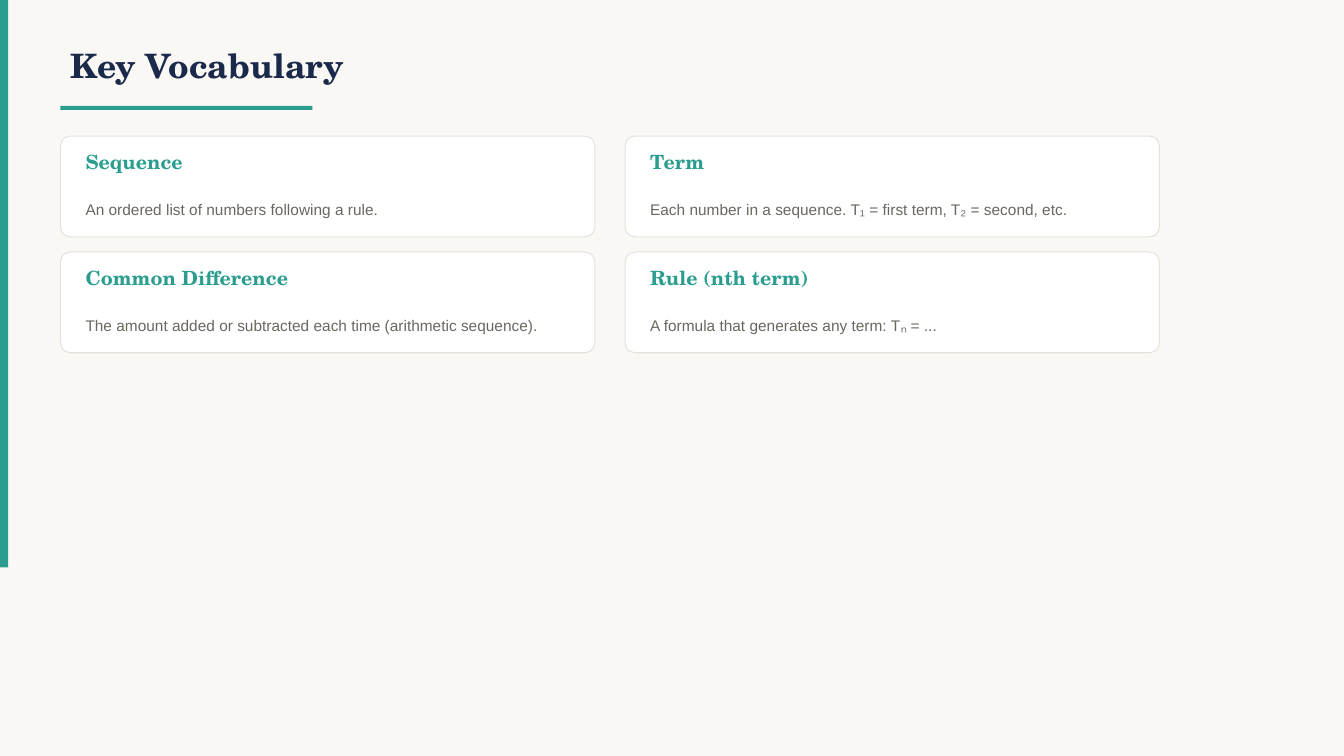
from pptx import Presentation
from pptx.dml.color import RGBColor
from pptx.enum.shapes import MSO_SHAPE as Shape
from pptx.enum.text import MSO_ANCHOR as Anchor
from pptx.util import Inches, Pt

CREAM = RGBColor(0xFA, 0xF8, 0xF5)
TEAL = RGBColor(0x2A, 0x9D, 0x8F)
NAVY = RGBColor(0x1B, 0x2A, 0x4A)
WHITE = RGBColor(0xFF, 0xFF, 0xFF)
BORDER = RGBColor(0xE5, 0xE2, 0xDC)
GRAY = RGBColor(0x6B, 0x66, 0x60)
SERIF, SANS = "TeX Gyre Schola", "Arial"

TERMS = [
    ("Sequence", "An ordered list of numbers following a rule."),
    ("Term", "Each number in a sequence. T₁ = first term, T₂ = second, etc."),
    ("Common Difference",
     "The amount added or subtracted each time (arithmetic sequence)."),
    ("Rule (nth term)", "A formula that generates any term: Tₙ = ..."),
]

deck = Presentation()
deck.slide_width, deck.slide_height = Inches(13.33), Inches(7.5)
slide = deck.slides.add_slide(deck.slide_layouts[6])
slide.background.fill.solid()
slide.background.fill.fore_color.rgb = CREAM


def add_box(kind, x, y, w, h, fill, line=None):
    box = slide.shapes.add_shape(kind, Inches(x), Inches(y), Inches(w), Inches(h))
    box.shadow.inherit = False
    box.fill.solid()
    box.fill.fore_color.rgb = fill
    if line is None:
        box.line.fill.background()
    else:
        box.line.color.rgb = line
        box.line.width = Pt(0.75)
    return box


def add_text(text, x, y, w, h, size, font, color, bold=False):
    """Add a one-paragraph text box, centred vertically, and return the paragraph."""
    box = slide.shapes.add_textbox(Inches(x), Inches(y), Inches(w), Inches(h))
    frame = box.text_frame
    frame.word_wrap = True
    frame.vertical_anchor = Anchor.MIDDLE
    frame.text = text
    para = frame.paragraphs[0]
    style = para.runs[0].font
    style.size, style.name, style.bold = Pt(size), font, bold
    style.color.rgb = color
    return para


add_box(Shape.RECTANGLE, 0, 0, 0.08, 5.63, TEAL)
add_text("Key Vocabulary", 0.6, 0.3, 10, 0.7, 24, SERIF, NAVY, True)
add_box(Shape.RECTANGLE, 0.6, 1.05, 2.5, 0.04, TEAL)

for i, (term, meaning) in enumerate(TERMS):
    row, col = divmod(i, 2)
    x, y = 0.6 + col * 5.6, 1.35 + row * 1.15
    card = add_box(Shape.ROUNDED_RECTANGLE, x, y, 5.3, 1, WHITE, BORDER)
    card.adjustments[0] = 0.1
    add_text(term, x + 0.15, y + 0.08, 5, 0.35, 14, SERIF, TEAL, True)
    para = add_text(meaning, x + 0.15, y + 0.45, 5, 0.5, 11, SANS, GRAY)
    para.line_spacing = 1.3

deck.save("out.pptx")
